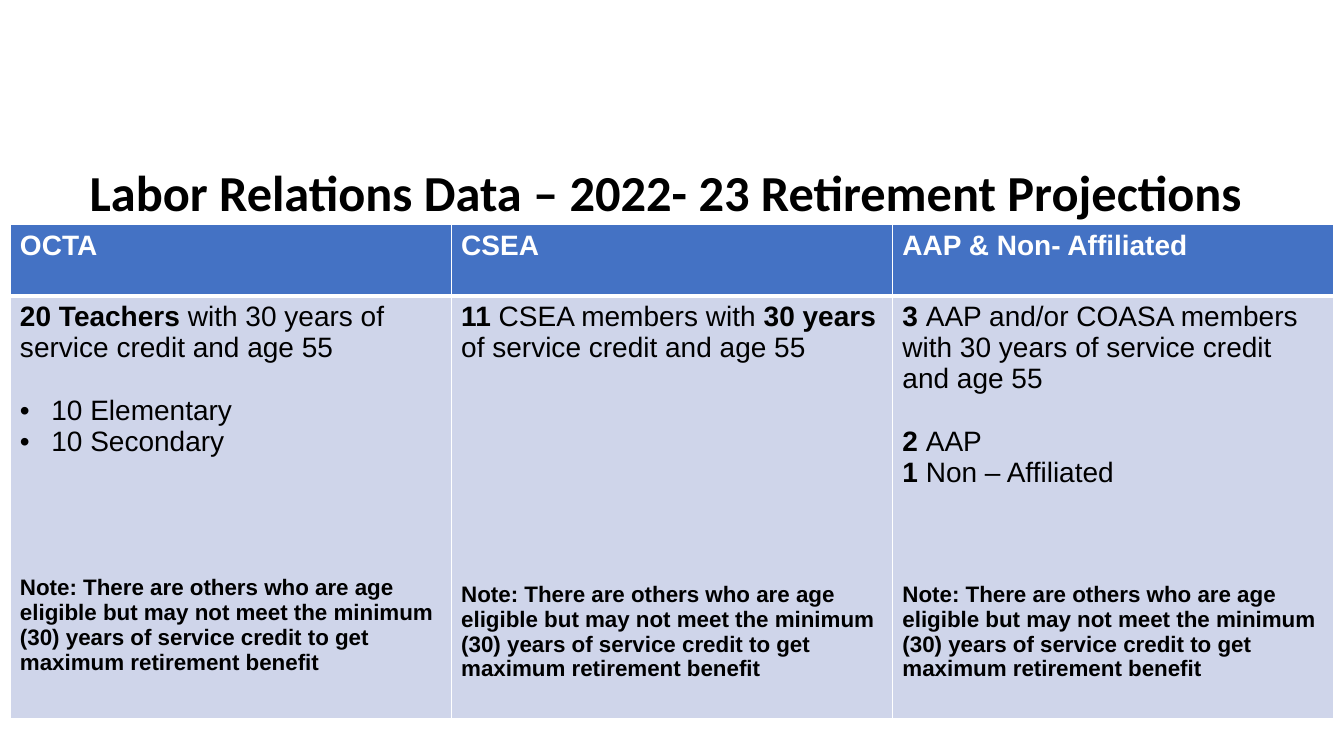
from lxml.etree import SubElement
from pptx import Presentation
from pptx.dml.color import RGBColor
from pptx.enum.text import MSO_ANCHOR, PP_ALIGN
from pptx.oxml import parse_xml
from pptx.oxml.ns import nsdecls, qn
from pptx.util import Cm, Pt

BLACK = RGBColor(0x00, 0x00, 0x00)
WHITE = RGBColor(0xFF, 0xFF, 0xFF)
HEADER_BLUE = RGBColor(0x44, 0x72, 0xC4)
BODY_BLUE = RGBColor(0xCF, 0xD5, 0xEA)
LINE = 22.3  # height of one 20 pt line, in points

NOTE = ("Note: There are others who are age eligible but may not meet the minimum (30) "
        "years of service credit to get maximum retirement benefit")

# Each paragraph: space before in points, bulleted, runs of (text, bold)
COLUMNS = [
    ("OCTA", 84.7, [
        (0, False, [("20 Teachers ", True), ("with 30 years of service credit and age 55", False)]),
        (LINE, True, [("10 Elementary", False)]),
        (0, True, [("10 Secondary", False)]),
    ]),
    ("CSEA", 7 * LINE, [
        (0, False, [("11 ", True), ("CSEA members with ", False), ("30 years ", True),
                    ("of service credit and age 55", False)]),
    ]),
    ("AAP & Non- Affiliated", 3 * LINE, [
        (0, False, [("3 ", True),
                    ("AAP and/or COASA members with 30 years of service credit and age 55", False)]),
        (LINE, False, [("2 ", True), ("AAP", False)]),
        (0, False, [("1", True), (" Non – Affiliated", False)]),
    ]),
]


def add_run(p, text, color, **font):
    r = p.add_run()
    r.text = text
    for name, value in font.items():
        setattr(r.font, name, value)
    r.font.color.rgb = color


def style_cell(cell, fill, top, bottom):
    """Fill the cell and give it white borders; top and bottom are widths in points."""
    cell.fill.solid()
    cell.fill.fore_color.rgb = fill
    tcPr = cell._tc.get_or_add_tcPr()
    borders = {"lnL": 1, "lnR": 1, "lnT": top, "lnB": bottom}
    for i, (tag, width) in enumerate(borders.items()):
        tcPr.insert(i, parse_xml(
            f'<a:{tag} {nsdecls("a")} w="{Pt(width)}"><a:solidFill>'
            f'<a:srgbClr val="{WHITE}"/></a:solidFill></a:{tag}>'))


prs = Presentation()
prs.slide_width, prs.slide_height = Cm(33.87), Cm(19.05)
s = prs.slides.add_slide(prs.slide_layouts[6])

title = s.shapes.add_textbox(Cm(1.73), Cm(4.19), Cm(30.4), Cm(1.55))
tf = title.text_frame
tf.word_wrap = True
tf.vertical_anchor = MSO_ANCHOR.BOTTOM
p = tf.paragraphs[0]
p.alignment = PP_ALIGN.CENTER
p.line_spacing = 0.9
add_run(p, "Labor Relations Data – 2022- 23 Retirement Projections ", BLACK,
        name="Calibri", size=Pt(36), bold=True)

table = s.shapes.add_table(2, len(COLUMNS), Cm(0.25), Cm(5.66), Cm(33.36), Cm(12.44)).table
table.rows[0].height, table.rows[1].height = Cm(1.8), Cm(10.64)

for i, (heading, note_gap, paragraphs) in enumerate(COLUMNS):
    table.columns[i].width = Cm(11.12)
    header, body = table.cell(0, i), table.cell(1, i)
    style_cell(header, HEADER_BLUE, 1, 3)
    style_cell(body, BODY_BLUE, 3, 1)
    add_run(header.text_frame.paragraphs[0], heading, WHITE,
            name="Arial", size=Pt(20), bold=True)

    tf = body.text_frame
    for j, (gap, bulleted, runs) in enumerate(paragraphs):
        p = tf.add_paragraph() if j else tf.paragraphs[0]
        if bulleted:
            pPr = p._p.get_or_add_pPr()
            pPr.set("marL", str(Cm(0.79)))
            pPr.set("indent", str(-Cm(0.79)))
            SubElement(pPr, qn("a:buFont"), typeface="Arial")
            SubElement(pPr, qn("a:buChar"), char="•")
        if gap:
            p.space_before = Pt(gap)
        for text, bold in runs:
            add_run(p, text, BLACK, name="Arial", size=Pt(20), bold=bold)

    p = tf.add_paragraph()
    p.space_before = Pt(note_gap)
    add_run(p, NOTE, BLACK, name="Arial", size=Pt(16), bold=True)

prs.save("out.pptx")
